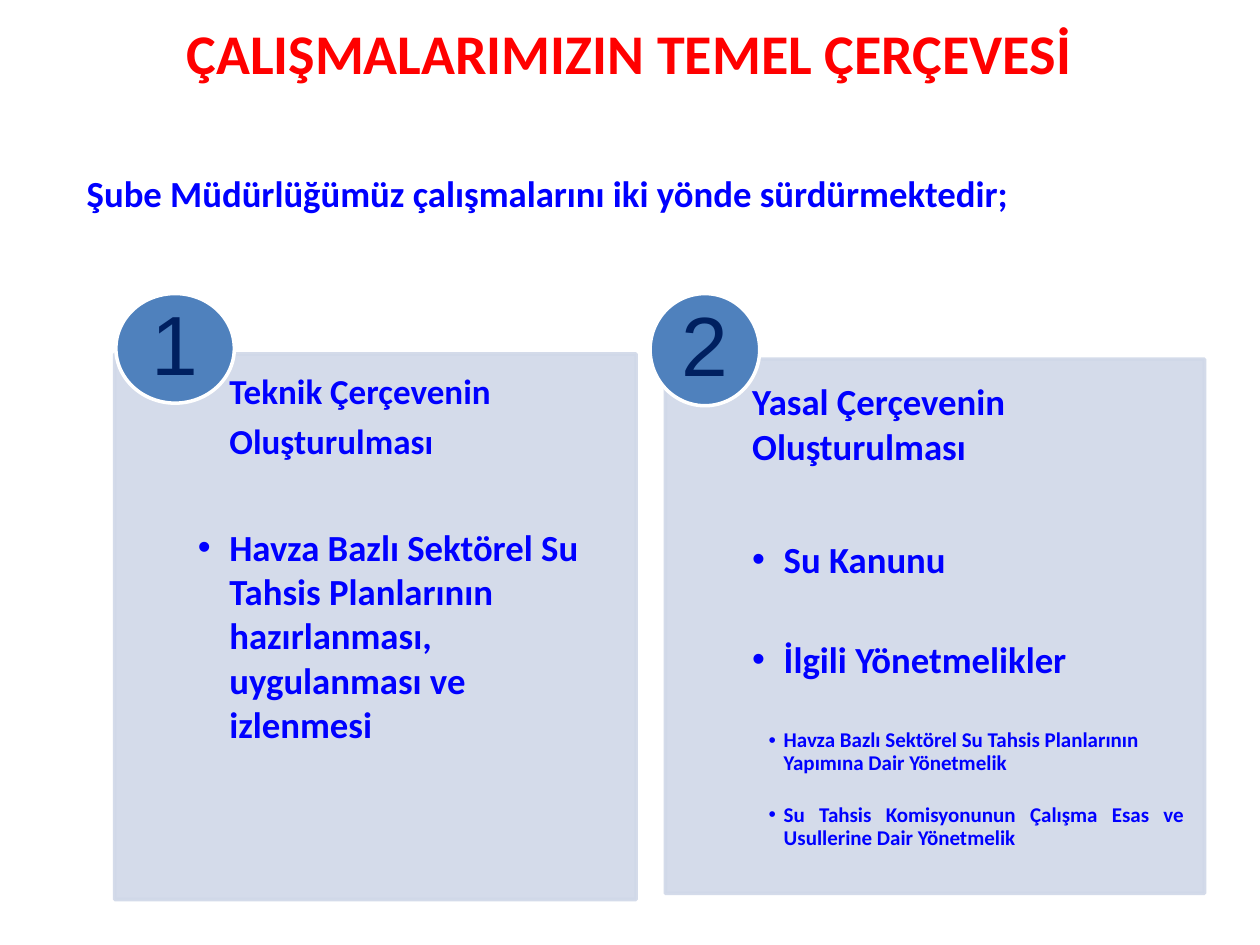
"""Build the slide that frames the branch office's work in two numbered panels."""
from dataclasses import dataclass

from lxml.etree import SubElement
from pptx import Presentation
from pptx.dml.color import RGBColor
from pptx.enum.shapes import MSO_SHAPE
from pptx.enum.text import MSO_ANCHOR, MSO_AUTO_SIZE, PP_ALIGN
from pptx.oxml.ns import qn
from pptx.shapes.autoshape import Shape
from pptx.slide import Slide
from pptx.text.text import TextFrame, _Paragraph
from pptx.util import Inches, Pt

RED = RGBColor(0xFF, 0x00, 0x00)
BLUE = RGBColor(0x00, 0x00, 0xFF)
NAVY = RGBColor(0x00, 0x20, 0x60)
STEEL = RGBColor(0x4F, 0x81, 0xBD)
PALE = RGBColor(0xD0, 0xD8, 0xE8)
WHITE = RGBColor(0xFF, 0xFF, 0xFF)

Box = tuple[float, float, float, float]


@dataclass(frozen=True)
class Entry:
    text: str
    size: int
    after: float
    level: int = 0
    margin: float = 0.25
    hanging: float = 0
    spacing: float = 1.0
    align: PP_ALIGN = PP_ALIGN.LEFT


@dataclass(frozen=True)
class Panel:
    number: str
    card: Box
    badge: Box
    text_left: float
    entries: tuple[Entry, ...]


PANELS = (
    Panel("1", (0.91, 2.81, 4.14, 4.33), (0.92, 2.33, 0.94, 0.87), 1.57, (
        Entry("Teknik Çerçevenin", 20, 7, spacing=0.9),
        Entry("Oluşturulması", 20, 36, spacing=0.9),
        Entry("Havza Bazlı Sektörel Su Tahsis Planlarının hazırlanması, "
              "uygulanması ve izlenmesi", 21, 0, 1, hanging=0.25),
    )),
    Panel("2", (5.28, 2.85, 4.28, 4.24), (5.16, 2.33, 0.87, 0.89), 5.97, (
        Entry("Yasal Çerçevenin Oluşturulması", 21, 39.5, margin=0),
        Entry("Su Kanunu", 21, 32, 1, hanging=0.25),
        Entry("İlgili Yönetmelikler", 21, 28, 1, hanging=0.25),
        Entry("Havza Bazlı Sektörel Su Tahsis Planlarının Yapımına Dair Yönetmelik",
              12, 16.8, 2, hanging=0.12, spacing=0.9),
        Entry("Su Tahsis Komisyonunun Çalışma Esas ve Usullerine Dair Yönetmelik",
              12, 0, 2, hanging=0.12, spacing=0.9, align=PP_ALIGN.JUSTIFY),
    )),
)


def place(shape: Shape, box: Box) -> None:
    """Move and size a shape in inches."""
    shape.left, shape.top, shape.width, shape.height = map(Inches, box)


def set_font(paragraph: _Paragraph, size: int, color: RGBColor,
             name: str = "Calibri", bold: bool = True) -> None:
    """Set the font of a whole paragraph."""
    font = paragraph.font
    font.name, font.size, font.bold = name, Pt(size), bold
    font.color.rgb = color


def set_insets(frame: TextFrame, left: float, others: float) -> None:
    """Set the text insets in inches."""
    frame.margin_left = Inches(left)
    frame.margin_top = frame.margin_right = frame.margin_bottom = Inches(others)


def add_filled(slide: Slide, preset: MSO_SHAPE, box: Box,
               fill: RGBColor, line: RGBColor) -> Shape:
    """Add a flat preset shape."""
    shape = slide.shapes.add_shape(preset, *map(Inches, box))
    shape.shadow.inherit = False
    shape.fill.solid()
    shape.fill.fore_color.rgb = fill
    shape.line.color.rgb = line
    shape.line.width = Pt(2)
    return shape


def add_card(slide: Slide, box: Box) -> None:
    """Add a panel's slightly transparent background."""
    card = add_filled(slide, MSO_SHAPE.RECTANGLE, box, PALE, PALE)
    for color in card._element.spPr.iter(qn("a:srgbClr")):
        SubElement(color, qn("a:alpha"), val="90000")


def add_badge(slide: Slide, box: Box, number: str) -> None:
    """Add the numbered circle of a panel."""
    badge = add_filled(slide, MSO_SHAPE.OVAL, box, STEEL, WHITE)
    frame = badge.text_frame
    set_insets(frame, 0, 0)
    frame.vertical_anchor = MSO_ANCHOR.MIDDLE
    paragraph = frame.paragraphs[0]
    paragraph.text = number
    paragraph.alignment = PP_ALIGN.CENTER
    paragraph.line_spacing = 0.9
    set_font(paragraph, 48, NAVY, "Arial", False)


def write_entry(paragraph: _Paragraph, entry: Entry) -> None:
    """Write one heading or bulleted entry."""
    paragraph.text = entry.text
    paragraph.level = entry.level
    paragraph.alignment = entry.align
    paragraph.line_spacing = entry.spacing
    paragraph.space_before = Pt(0)
    paragraph.space_after = Pt(entry.after)
    properties = paragraph._p.get_or_add_pPr()
    properties.set("marL", str(Inches(entry.margin)))
    properties.set("indent", str(-Inches(entry.hanging)))
    if entry.hanging:
        SubElement(properties, qn("a:buFont"), typeface="Arial")
        SubElement(properties, qn("a:buChar"), char="•")
    else:
        SubElement(properties, qn("a:buNone"))
    set_font(paragraph, entry.size, BLUE)


def draw_panel(slide: Slide, panel: Panel, body: Shape) -> None:
    """Draw a card, its list and its numbered badge from back to front."""
    add_card(slide, panel.card)
    slide.shapes._spTree.append(body._element)
    left, top, width, height = panel.card
    place(body, (panel.text_left, top, left + width - panel.text_left, height))
    frame = body.text_frame
    frame.auto_size = MSO_AUTO_SIZE.NONE
    set_insets(frame, 0, 0.16)
    for index, entry in enumerate(panel.entries):
        write_entry(frame.add_paragraph() if index else frame.paragraphs[0], entry)
    add_badge(slide, panel.badge, panel.number)


def main() -> None:
    """Build and save the slide."""
    presentation = Presentation()
    presentation.slide_width, presentation.slide_height = Inches(10), Inches(7.5)
    slide = presentation.slides.add_slide(presentation.slide_layouts[3])
    heading, *bodies = slide.placeholders

    place(heading, (0.98, 0.09, 8.03, 0.64))
    heading.text_frame.auto_size = MSO_AUTO_SIZE.NONE
    heading.text_frame.text = "ÇALIŞMALARIMIZIN TEMEL ÇERÇEVESİ"
    set_font(heading.text_frame.paragraphs[0], 32, RED)

    intro = slide.shapes.add_textbox(*map(Inches, (0.59, 1.31, 9.06, 0.79))).text_frame
    intro.word_wrap = True
    intro.text = "Şube Müdürlüğümüz çalışmalarını iki yönde sürdürmektedir;"
    set_font(intro.paragraphs[0], 21, BLUE)

    for panel, body in zip(PANELS, bodies):
        draw_panel(slide, panel, body)
    presentation.save("out.pptx")


if __name__ == "__main__":
    main()
